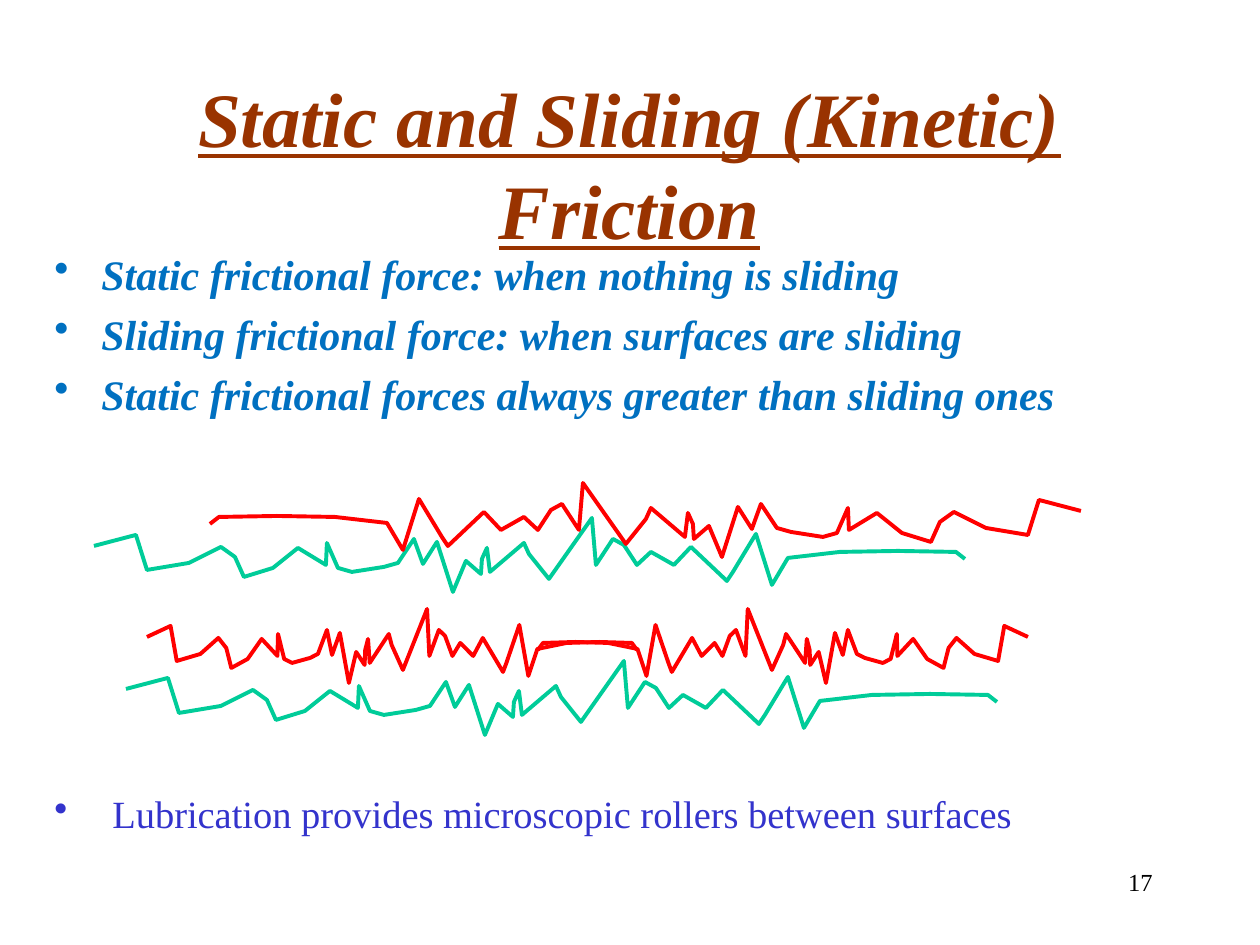
import pptx
import pptx.util
import pptx.dml.color
import pptx.enum.text
import pptx.oxml
import lxml.etree

SCALE = 914400 / 126
ALIGN = pptx.enum.text.PP_ALIGN
ANCHOR = pptx.enum.text.MSO_ANCHOR


def hue(code):
    return pptx.dml.color.RGBColor.from_string(code)


def write(box, lines, look, align=ALIGN.LEFT, anchor=ANCHOR.TOP, indent=0, gap=0):
    frame = slide.shapes.add_textbox(*[round(n * SCALE) for n in box]).text_frame
    frame.word_wrap = True
    frame.vertical_anchor = anchor
    for i, line in enumerate(lines):
        para = frame.add_paragraph() if i else frame.paragraphs[0]
        para.alignment = align
        para.space_before = pptx.util.Pt(gap)
        run = para.add_run()
        run.text = line
        run.font.color.rgb = hue(look["color"])
        for key, value in look["font"].items():
            setattr(run.font, key, value)
        if indent:
            props = para._p.get_or_add_pPr()
            props.set("marL", str(round(indent * SCALE)))
            props.set("indent", str(-round(indent * SCALE)))
            mark = lxml.etree.SubElement(props, pptx.oxml.ns.qn("a:buChar"))
            mark.set("char", "•")


deck = pptx.Presentation()
deck.slide_width = round(1260 * SCALE)
deck.slide_height = round(945 * SCALE)
slide = deck.slides.add_slide(deck.slide_layouts[6])

face = "Times New Roman"
heavy = {"name": face, "bold": True, "italic": True}
looks = {
    "page": {"color": "000000", "font": {"name": face, "size": pptx.util.Pt(14)}},
    "title": {"color": "993300",
              "font": {**heavy, "size": pptx.util.Pt(44), "underline": True}},
    "body": {"color": "0070C0", "font": {**heavy, "size": pptx.util.Pt(24)}},
    "note": {"color": "3333CC", "font": {"name": face, "size": pptx.util.Pt(22)}},
}

write((903, 861, 262, 63), ["17"], looks["page"], align=ALIGN.RIGHT)
write((94, 84, 1071, 158), ["Static and Sliding (Kinetic) Friction"],
      looks["title"], align=ALIGN.CENTER, anchor=ANCHOR.MIDDLE)
write((42, 242, 1166, 210), [
    "Static frictional force: when nothing is sliding",
    "Sliding frictional force: when surfaces are sliding",
    "Static frictional forces always greater than sliding ones",
], looks["body"], indent=47, gap=5.5)

span = 871
rough = [
    (0, 28), (42, 17), (53, 52), (95, 45), (127, 29), (141, 39), (150, 59),
    (179, 50), (204, 30), (232, 47), (233, 25), (244, 50), (258, 54), (290, 49),
    (304, 45), (320, 21), (329, 46), (343, 24), (359, 74), (372, 43), (387, 56),
    (388, 41), (393, 30), (396, 54), (430, 25), (435, 36), (455, 61), (498, 0),
    (502, 47), (519, 21), (530, 27), (543, 47), (557, 34), (580, 47), (597, 29),
    (633, 63), (639, 54), (662, 16), (678, 67), (694, 40), (746, 34), (804, 33),
    (862, 34), (871, 41),
]
green, red = "00CC99", "FF0000"
pairs = [
    [(94, 518, 871, False, green), (210, 483, 871, True, red)],
    [(126, 661, 871, False, green)],
    [(538, 609, 490, True, red), (147, 609, 490, False, red)],
]
for pair in pairs:
    home = slide.shapes
    if len(pair) > 1:
        home = slide.shapes.add_group_shape().shapes
    for left, top, width, flip, color in pair:
        dots = [(left + (span - x if flip else x) * width / span, top + y)
                for x, y in rough]
        pen = home.build_freeform(*[round(n * SCALE) for n in dots[0]])
        pen.add_line_segments(
            [(round(x * SCALE), round(y * SCALE)) for x, y in dots[1:]], close=False)
        edge = pen.convert_to_shape()
        edge.shadow.inherit = False
        edge.fill.background()
        edge.line.color.rgb = hue(color)
        edge.line.width = pptx.util.Pt(2.25)

write((42, 784, 1055, 63),
      ["Lubrication provides microscopic rollers between surfaces"],
      looks["note"], indent=58)

deck.save("out.pptx")
